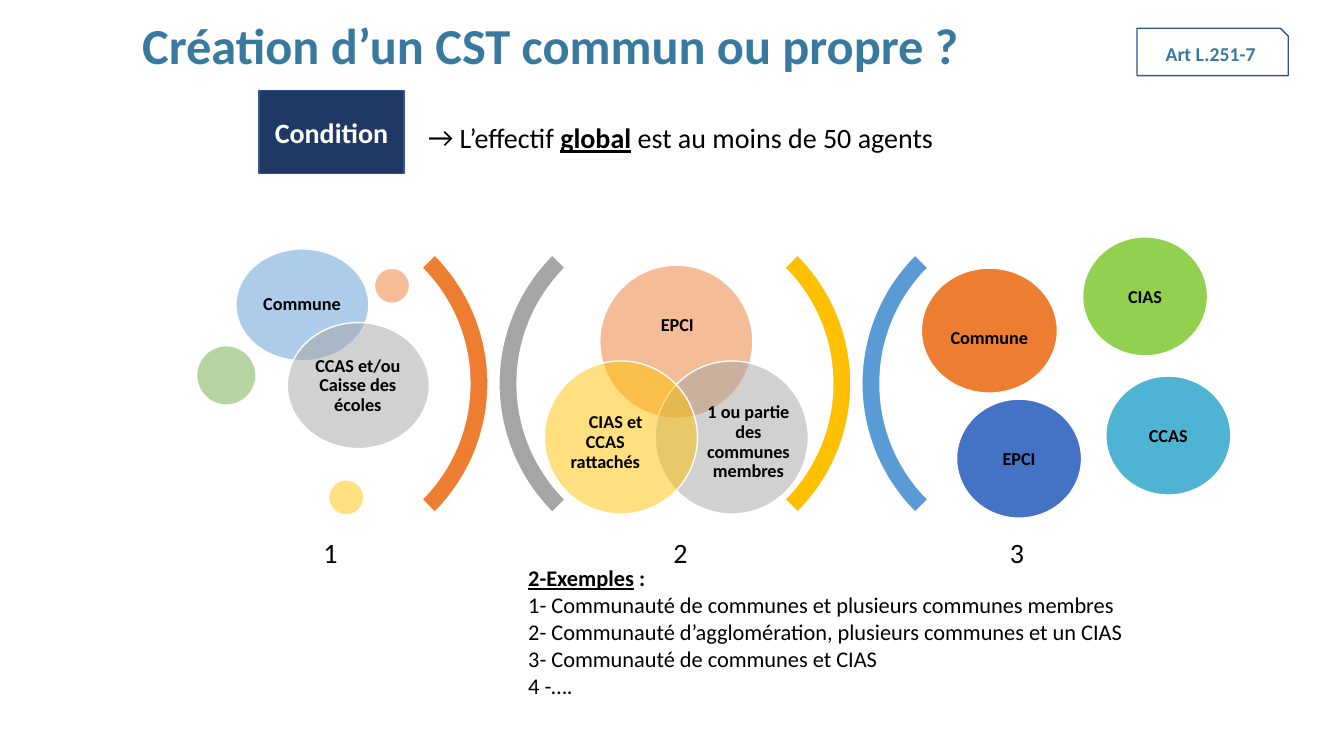
from lxml.etree import SubElement
from pptx import Presentation
from pptx.dml.color import RGBColor
from pptx.enum.shapes import MSO_SHAPE as Preset
from pptx.enum.text import MSO_ANCHOR as Anchor, MSO_AUTO_SIZE as AutoSize, PP_ALIGN as Align
from pptx.oxml.ns import qn
from pptx.util import Pt

BLUE, NAVY, BORDER = "3879A0", "203864", "325491"
BLACK, WHITE = "000000", "FFFFFF"
ORANGE, GREY, YELLOW, SKY, GREEN = "ED7D31", "A5A5A5", "FFC000", "5B9BD5", "70AD47"
LABEL = {"size": 13, "bold": True}


def rgb(value):
    return RGBColor.from_string(value)


def add_run(paragraph, text, color=BLACK, **formats):
    run = paragraph.add_run()
    run.text = text
    run.font.color.rgb = rgb(color)
    formats = {"name": "Calibri", **formats, "size": Pt(formats["size"])}
    for name, value in formats.items():
        setattr(run.font, name, value)


def set_frame(frame, margin, anchor=Anchor.MIDDLE):
    formats = {"word_wrap": True, "auto_size": AutoSize.NONE, "vertical_anchor": anchor}
    for side in ("left", "top", "right", "bottom"):
        formats[f"margin_{side}"] = Pt(margin)
    for name, value in formats.items():
        setattr(frame, name, value)


def write_centered(shape, text, margin=3.6, spacing=0.9, **formats):
    set_frame(shape.text_frame, margin)
    paragraph = shape.text_frame.paragraphs[0]
    paragraph.alignment = Align.CENTER
    paragraph.line_spacing = spacing
    add_run(paragraph, text, **formats)
    return paragraph


def add_label(slide, box, text, margin=0, **formats):
    shape = slide.shapes.add_textbox(*map(Pt, box))
    return write_centered(shape, text, margin, **formats)


def add_shape(slide, preset, box, fill=None, line=WHITE, opacity=100):
    shape = slide.shapes.add_shape(preset, *map(Pt, box))
    shape.shadow.inherit = False
    shape.line.color.rgb = rgb(line)
    shape.line.width = Pt(1)
    if fill is None:
        shape.fill.background()
        return shape
    shape.fill.solid()
    shape.fill.fore_color.rgb = rgb(fill)
    if opacity < 100:
        color = shape._element.spPr.find(qn("a:solidFill"))[0]
        SubElement(color, qn("a:alpha"), val=str(opacity * 1000))
    return shape


def add_title(slide, box):
    title = slide.shapes.title
    title.left, title.top, title.width, title.height = map(Pt, box)
    set_frame(title.text_frame, 7.2)
    paragraph = title.text_frame.paragraphs[0]
    paragraph.alignment = Align.LEFT
    paragraph.line_spacing = 0.9
    add_run(paragraph, "Création d’un CST commun ou propre ?", BLUE, size=36, bold=True)


def add_reference(slide, box):
    tag = add_shape(slide, Preset.SNIP_1_RECTANGLE, box, line=BORDER)
    write_centered(tag, "Art L.251-7", spacing=1, color=BLUE, size=14, bold=True)


def add_condition(slide, left, top):
    # Dark heading
    heading = add_shape(slide, Preset.RECTANGLE, (left, top, 103.7, 59), NAVY, BORDER)
    write_centered(heading, "Condition", spacing=1, color=WHITE, size=20, bold=True)
    # Arrow bullet
    box = slide.shapes.add_textbox(*map(Pt, (left + 113.8, top + 18, 474.5, 31.7)))
    set_frame(box.text_frame, 7.2, Anchor.TOP)
    box.text_frame.margin_top = box.text_frame.margin_bottom = Pt(3.6)
    paragraph = box.text_frame.paragraphs[0]
    properties = paragraph._p.get_or_add_pPr()
    properties.set("marL", str(Pt(22.5)))
    properties.set("indent", str(Pt(-22.5)))
    SubElement(properties, qn("a:buFont"), typeface="Calibri")
    SubElement(properties, qn("a:buChar"), char="→")
    add_run(paragraph, "L’effectif ", size=20)
    add_run(paragraph, "global", size=20, bold=True, underline=True)
    add_run(paragraph, " est au moins de 50 agents", size=20)


def add_separators(slide, left, top):
    # Each pair is a closing arc followed by an opening arc
    size, step = 260, 259.2
    for pair, colors in enumerate([(ORANGE, GREY), (YELLOW, SKY)]):
        for color, shift, rotation in zip(colors, (0, 267.8), (90, 270)):
            box = (left + pair * step + shift, top, size, size)
            arc = add_shape(slide, Preset.BLOCK_ARC, box, color)
            arc.rotation = rotation
            for index, value in enumerate((135, 189, 0.05)):
                arc.adjustments[index] = value


def add_numbers(slide, top):
    for number, left in enumerate((137.5, 387.4, 627.8), start=1):
        add_label(slide, (left, top, 197.3, 51.8), str(number), 5.8, size=20)


def add_town_group(slide, left, top):
    # Two overlapping circles, then three small dots
    circles = [
        ((28.1, 0, 95, 79.9), SKY, (41.8, 11.5, 67, 56.2), "Commune"),
        ((64.8, 52.6, 101.5, 90), GREY, (79.2, 66.2, 72, 63.4), "CCAS et/ou Caisse des écoles"),
    ]
    for (x, y, *size), color, (label_x, label_y, *label_size), text in circles:
        add_shape(slide, Preset.OVAL, (left + x, top + y, *size), color, opacity=50)
        add_label(slide, (left + label_x, top + label_y, *label_size), text, 3.6, **LABEL)
    for x, y, size, color in [(0, 69.1, 42.5, GREEN), (127, 13.7, 25.2, ORANGE),
                              (94.3, 164.9, 25.2, YELLOW)]:
        add_shape(slide, Preset.OVAL, (left + x, top + y, size, size), color, opacity=50)


def add_district_venn(slide, left, top):
    size, step, drop = 109.4, 39.6, 68.4
    circles = [
        (step, 0, ORANGE, (54.7, 18.7, 80.6, 49), "EPCI", 0),
        (2 * step, drop, GREY, (113, 96.4, 65.5, 60.5), "1 ou partie des communes membres", 0),
        (0, drop, YELLOW, (10.8, 96.4, 65.5, 60.5), "CIAS et CCAS rattachés", 14.7),
    ]
    for x, y, color, (label_x, label_y, *label_size), text, indent in circles:
        add_shape(slide, Preset.OVAL, (left + x, top + y, size, size), color, opacity=50)
        label = add_label(slide, (left + label_x, top + label_y, *label_size), text, **LABEL)
        if indent:
            label._p.get_or_add_pPr().set("indent", str(Pt(indent)))


def add_separate_bodies(slide, left, top):
    bodies = [
        ("Commune", 0, 22.3, 97.2, 89.3, ORANGE),
        ("CIAS", 115.2, 0, 89.3, 85, "92D050"),
        ("CCAS", 131.8, 99.4, 89.3, 85, "4FB3D3"),
        ("EPCI", 25.2, 115.9, 89.3, 85, "4472C4"),
    ]
    for text, x, y, width, height, color in bodies:
        body = add_shape(slide, Preset.OVAL, (left + x, top + y, width, height), color)
        write_centered(body, text, 2, spacing=1, **LABEL)
        if text == "Commune":
            body.text_frame.margin_top = Pt(12)


def add_examples(slide, box):
    body = slide.placeholders[1]
    body.left, body.top, body.width, body.height = map(Pt, box)
    frame = body.text_frame
    set_frame(frame, 7.2, Anchor.TOP)
    frame.margin_top = frame.margin_bottom = Pt(3.6)
    lines = [
        [("2-Exemples", {"bold": True, "underline": True}), (" :", {"bold": True})],
        [("1- Communauté de communes et plusieurs communes membres", {})],
        [("2- Communauté d’agglomération, plusieurs communes et un CIAS", {})],
        [("3- Communauté de communes et CIAS", {})],
        [("4 -….", {})],
    ]
    for index, runs in enumerate(lines):
        paragraph = frame.add_paragraph() if index else frame.paragraphs[0]
        properties = paragraph._p.get_or_add_pPr()
        properties.set("marL", "0")
        properties.set("indent", "0")
        SubElement(properties, qn("a:buNone"))
        paragraph.space_before = Pt(0)
        for text, formats in runs:
            add_run(paragraph, text, size=16, **formats)


def main():
    presentation = Presentation()
    presentation.slide_width, presentation.slide_height = Pt(960), Pt(540)
    slide = presentation.slides.add_slide(presentation.slide_layouts[1])
    for placeholder in slide.placeholders:
        if placeholder.placeholder_format.idx > 1:
            placeholder._element.getparent().remove(placeholder._element)
    add_title(slide, (94.3, 5, 666.7, 59))
    add_separators(slide, 88.6, 144)
    add_numbers(slide, 370.1)
    add_district_venn(slide, 388.8, 189.4)
    add_town_group(slide, 140.4, 177.8)
    add_separate_bodies(slide, 658.1, 169.2)
    add_reference(slide, (812.2, 20.2, 108, 33.8))
    add_examples(slide, (370.1, 399.6, 447.8, 104.4))
    add_condition(slide, 185, 64.8)
    presentation.save("out.pptx")


if __name__ == "__main__":
    main()
